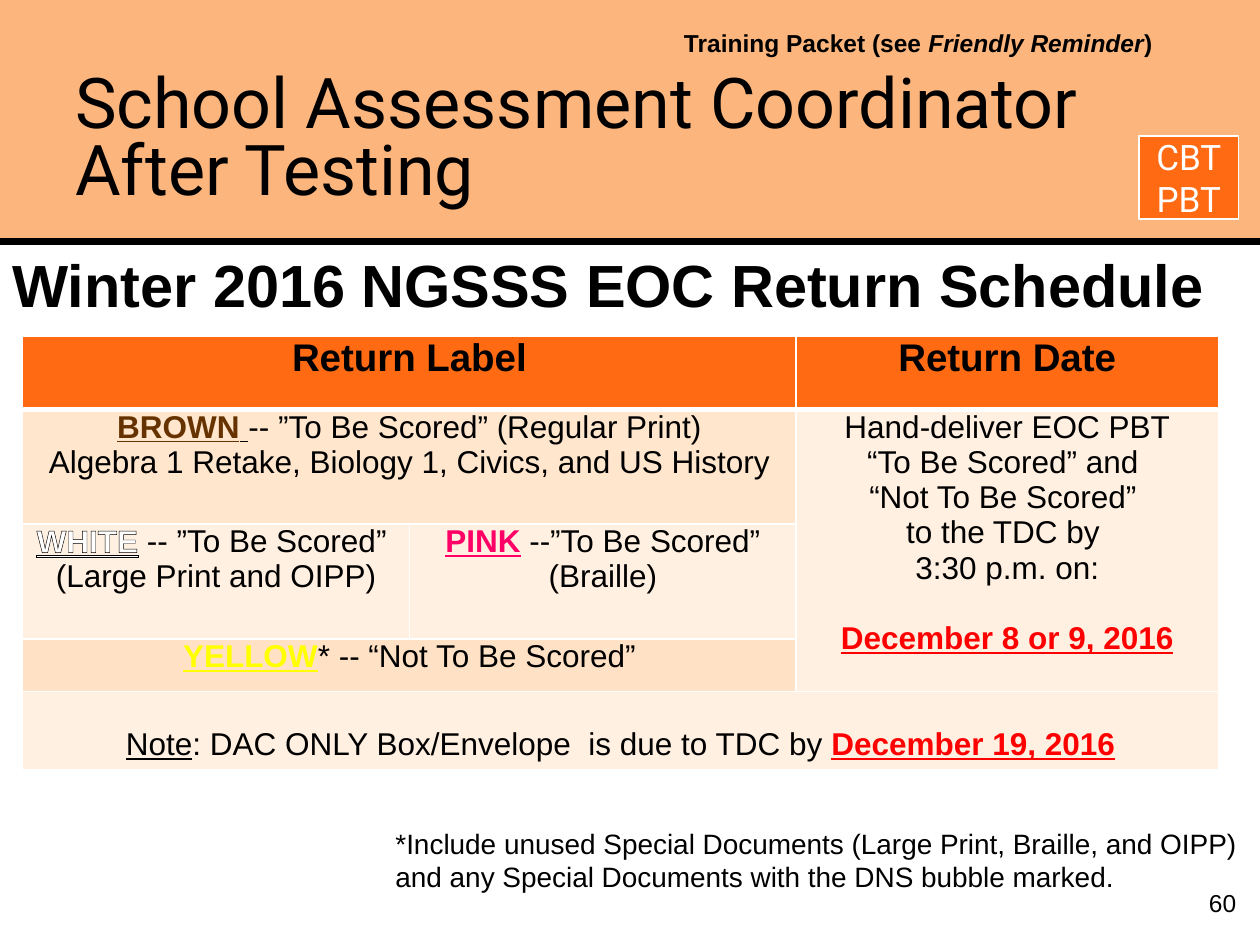
from lxml import etree
from pptx import Presentation
from pptx.dml.color import RGBColor
from pptx.enum.shapes import MSO_CONNECTOR, MSO_SHAPE
from pptx.enum.text import MSO_ANCHOR, PP_ALIGN
from pptx.oxml.ns import qn
from pptx.util import Inches, Pt

LEFT, CENTER, RIGHT = PP_ALIGN.LEFT, PP_ALIGN.CENTER, PP_ALIGN.RIGHT
TOP, MIDDLE = MSO_ANCHOR.TOP, MSO_ANCHOR.MIDDLE

BLACK = RGBColor(0x00, 0x00, 0x00)
WHITE = RGBColor(0xFF, 0xFF, 0xFF)
PEACH = RGBColor(0xFB, 0xB5, 0x7D)
ORANGE = RGBColor(0xFF, 0x6A, 0x13)
TINT = RGBColor(0xFF, 0xE6, 0xCD)
TINT_LIGHT = RGBColor(0xFF, 0xF0, 0xE1)
TINT_DARK = RGBColor(0xFF, 0xE2, 0xC5)
BROWN = RGBColor(0x66, 0x33, 0x00)
PINK = RGBColor(0xFF, 0x00, 0x66)
YELLOW = RGBColor(0xFF, 0xFF, 0x00)
RED = RGBColor(0xFF, 0x00, 0x00)

SLIDE_WIDTH, SLIDE_HEIGHT = 10, 7.5
BAND_HEIGHT = 1.92

# Content: a paragraph is a list of (text, format) runs
BOLD = {"bold": True}


def label(color):
    return {"bold": True, "underline": True, "color": color}


TITLE = [[("School Assessment Coordinator\vAfter Testing", {})]]
TEXT_BOXES = [  # box, paragraphs, base format, alignment, anchor, line spacing
    ((0.5, 0.5, 9.17, 1.25), TITLE, {"size": 40, "name": "Roboto"}, LEFT, MIDDLE, 0.8),
    ((9.33, 7, 0.58, 0.37), [[("60", {})]], {"size": 14}, RIGHT, TOP, 1),
    ((5.33, 0.17, 4.64, 0.34),
     [[("Training Packet (see ", {}), ("Friendly Reminder", {"italic": True}), (")", {})]],
     {"size": 14, "bold": True}, LEFT, TOP, 1),
    ((3.04, 6.51, 6.93, 0.64),
     [[("*Include unused Special Documents (Large Print, Braille, and OIPP) "
        "and any Special Documents with the DNS bubble marked.", {})]],
     {"size": 16}, LEFT, TOP, 1),
    ((0, BAND_HEIGHT, 9.83, 0.67), [[("Winter 2016 NGSSS EOC Return Schedule", {})]],
     {"size": 34, "bold": True}, LEFT, TOP, 1),
]
BADGE_LINES = [[("CBT", {})], [("PBT", {})]]

TABLE_LEFT, TABLE_TOP = 0.18, 2.67
COLUMN_WIDTHS = [3.07, 3.07, 3.35]
ROW_HEIGHTS = [0.58, 0.91, 0.91, 0.42, 0.62]
HEADER = {"size": 22, "bold": True}
BODY = {"size": 18}
BLANK_LINE = 0.28
CELLS = [  # row, column, row span, column span, fill, base format, paragraphs
    (0, 0, 1, 2, ORANGE, HEADER, [[("Return Label", {})]]),
    (0, 2, 1, 1, ORANGE, HEADER, [[("Return Date", {})]]),
    (1, 0, 1, 2, TINT, BODY, [
        [("BROWN", label(BROWN)), (" ", label(BLACK)),
         ("-- ”To Be Scored” (Regular Print)", {})],
        [("Algebra 1 Retake, Biology 1, Civics, and US History", {})]]),
    (1, 2, 3, 1, TINT_LIGHT, BODY, [
        [("Hand-deliver EOC PBT", {})], [("“To Be Scored” and ", {})],
        [("“Not To Be Scored” ", {})], [("to the TDC by ", {})],
        [("3:30 p.m. on:", {})], [("December 8 or 9, 2016", label(RED))]]),
    (2, 0, 1, 1, TINT_LIGHT, BODY, [
        [("WHITE", {**label(WHITE), "outline": BLACK}), (" -- ”To Be Scored” ", {})],
        [("(Large Print and OIPP)", {})]]),
    (2, 1, 1, 1, TINT_LIGHT, BODY, [
        [("PINK", label(PINK)), (" --”To Be Scored”", {})], [("(Braille)", {})]]),
    (3, 0, 1, 2, TINT_DARK, BODY, [
        [("YELLOW", label(YELLOW)), ("* -- “Not To Be Scored”", {})]]),
    (4, 0, 1, 3, TINT_LIGHT, BODY, [
        [("Note", {"underline": True}), (": DAC ONLY Box/Envelope  is due to TDC by ", {}),
         ("December 19, 2016", label(RED))]]),
]


def add_line_xml(parent, tag, points, color, index):
    line = etree.Element(qn(tag), w=str(Pt(points)))
    fill = etree.SubElement(line, qn("a:solidFill"))
    etree.SubElement(fill, qn("a:srgbClr"), val=str(color))
    parent.insert(index, line)


def write(frame, paragraphs, base, alignment, line_spacing=1):
    frame.word_wrap = True
    for number, runs in enumerate(paragraphs):
        paragraph = frame.paragraphs[0] if number == 0 else frame.add_paragraph()
        paragraph.alignment = alignment
        paragraph.line_spacing = line_spacing
        for text, changes in runs:
            values = {"name": "Arial", "color": BLACK, **base, **changes}
            color, outline = values.pop("color"), values.pop("outline", None)
            values["size"] = Pt(values["size"])
            for part_number, part in enumerate(text.split("\v")):
                if part_number:
                    paragraph.add_line_break()
                run = paragraph.add_run()
                run.text = part
                for key, value in values.items():
                    setattr(run.font, key, value)
                run.font.color.rgb = color
                if outline is not None:
                    add_line_xml(run.font._element, "a:ln", 0.75, outline, 0)


def add_rectangle(slide, box, fill):
    shape = slide.shapes.add_shape(MSO_SHAPE.RECTANGLE, *map(Inches, box))
    shape.shadow.inherit = False
    shape.fill.solid()
    shape.fill.fore_color.rgb = fill
    return shape


def add_schedule(slide):
    table = slide.shapes.add_table(
        len(ROW_HEIGHTS), len(COLUMN_WIDTHS), Inches(TABLE_LEFT), Inches(TABLE_TOP),
        Inches(sum(COLUMN_WIDTHS)), Inches(sum(ROW_HEIGHTS))).table
    table.first_row = table.horz_banding = False
    for column, width in zip(table.columns, COLUMN_WIDTHS):
        column.width = Inches(width)
    for row, height in zip(table.rows, ROW_HEIGHTS):
        row.height = Inches(height)

    for top, left, rows, columns, fill, base, paragraphs in CELLS:
        origin = table.cell(top, left)
        if rows * columns > 1:
            origin.merge(table.cell(top + rows - 1, left + columns - 1))
        for row in range(top, top + rows):
            for column in range(left, left + columns):
                cell = table.cell(row, column)
                cell.margin_left = cell.margin_right = Inches(0.07)
                cell.margin_top = cell.margin_bottom = 0
                cell.fill.solid()
                cell.fill.fore_color.rgb = fill
                widths = {"L": 1, "R": 1, "T": 3 if row == 1 else 1, "B": 3 if row == 0 else 1}
                for index, (side, points) in enumerate(widths.items()):
                    add_line_xml(cell._tc.get_or_add_tcPr(), f"a:ln{side}", points, WHITE, index)
        write(origin.text_frame, paragraphs, base, CENTER)

    # Gaps above the due date and above the note
    table.cell(1, 2).text_frame.paragraphs[-1].space_before = Inches(BLANK_LINE)
    table.cell(4, 0).margin_top = Inches(BLANK_LINE)


def main():
    presentation = Presentation()
    presentation.slide_width = Inches(SLIDE_WIDTH)
    presentation.slide_height = Inches(SLIDE_HEIGHT)
    slide = presentation.slides.add_slide(presentation.slide_layouts[6])

    # Title band and its rule
    add_rectangle(slide, (0, 0, SLIDE_WIDTH, BAND_HEIGHT), PEACH).line.fill.background()
    rule = slide.shapes.add_connector(
        MSO_CONNECTOR.STRAIGHT, 0, Inches(BAND_HEIGHT), Inches(SLIDE_WIDTH), Inches(BAND_HEIGHT))
    rule.line.color.rgb = BLACK
    rule.line.width = Pt(4)
    etree.SubElement(rule._element.spPr, qn("a:effectLst"))

    add_schedule(slide)

    # Title, headings, footnote and page number
    for box, paragraphs, base, alignment, anchor, line_spacing in TEXT_BOXES:
        frame = slide.shapes.add_textbox(*map(Inches, box)).text_frame
        frame.vertical_anchor = anchor
        write(frame, paragraphs, base, alignment, line_spacing)

    # Test type badge
    badge = add_rectangle(slide, (9.04, 1.08, 0.79, 0.66), ORANGE)
    badge.line.color.rgb = WHITE
    badge.line.width = Pt(0.75)
    badge.text_frame.vertical_anchor = MIDDLE
    write(badge.text_frame, BADGE_LINES, {"size": 20, "name": "Roboto", "color": WHITE}, CENTER)

    presentation.save("out.pptx")


if __name__ == "__main__":
    main()
